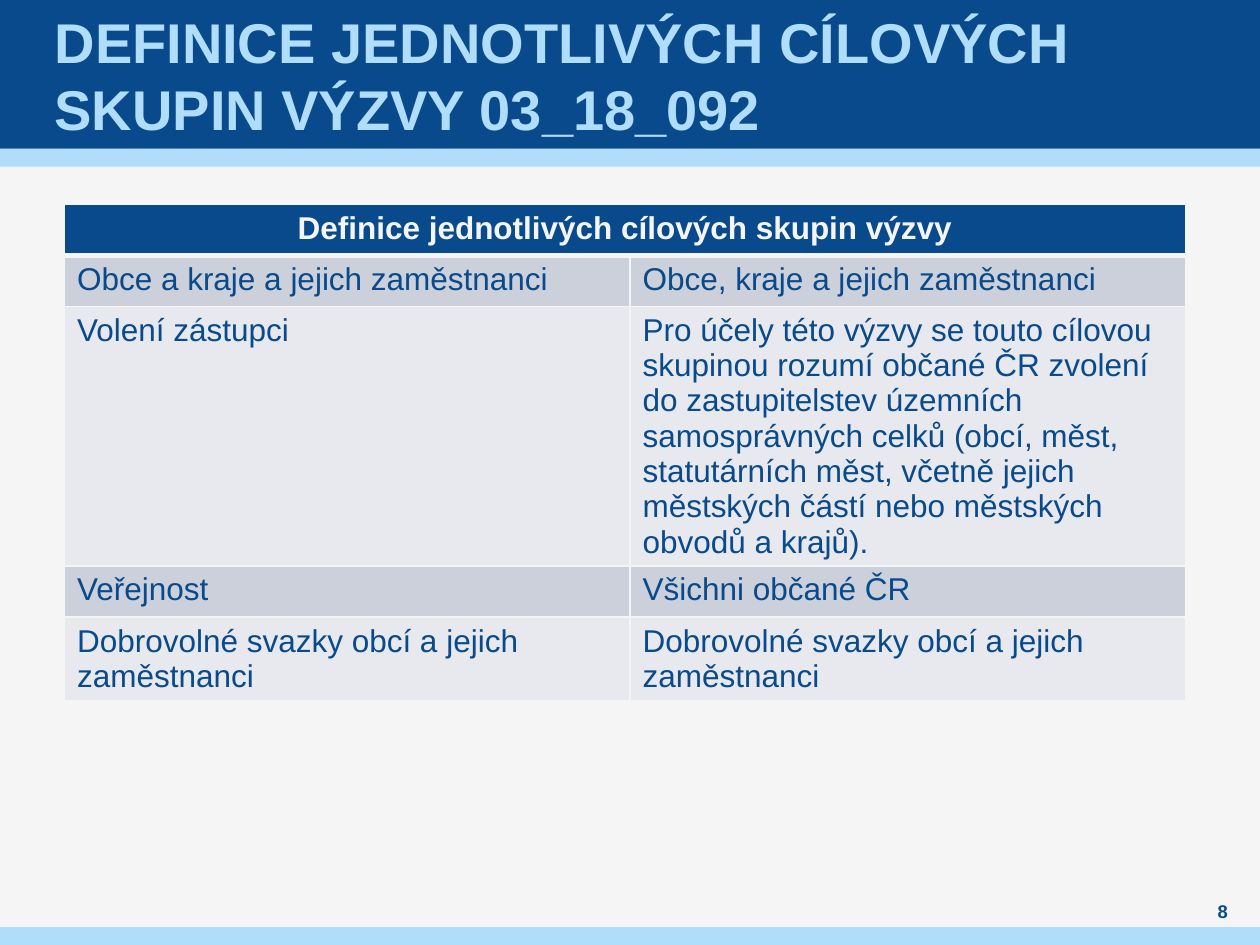
import pptx
import pptx.dml.color
import pptx.enum.shapes
import pptx.enum.text
import pptx.oxml
import pptx.oxml.ns
import pptx.util
from pptx.util import Cm

NAVY, SKY, PAPER = "084A8B", "AFDDFA", "F5F5F5"
ROW_FILLS = ["CCD0DA", "E7E9EE"]
TITLE = "DEFINICE JEDNOTLIVÝCH CÍLOVÝCH SKUPIN VÝZVY 03_18_092"
TABLE_HEADER = "Definice jednotlivých cílových skupin výzvy"
TARGET_GROUPS = [
    ("Obce a kraje a jejich zaměstnanci", "Obce, kraje a jejich zaměstnanci"),
    ("Volení zástupci",
     "Pro účely této výzvy se touto cílovou skupinou rozumí občané ČR zvolení "
     "do zastupitelstev územních samosprávných celků (obcí, měst, statutárních "
     "měst, včetně jejich městských částí nebo městských obvodů a krajů)."),
    ("Veřejnost", "Všichni občané ČR"),
    ("Dobrovolné svazky obcí a jejich zaměstnanci",
     "Dobrovolné svazky obcí a jejich zaměstnanci"),
]
PAGE_NUMBER = "8"
WIDTH, HEIGHT = 25.4, 19.05
HEADER_HEIGHT, STRIPE_HEIGHT = 3, 0.36
BANDS = [
    (HEADER_HEIGHT, STRIPE_HEIGHT, SKY),
    (0, HEADER_HEIGHT, NAVY),
    (HEIGHT - STRIPE_HEIGHT, STRIPE_HEIGHT, SKY),
]
COLUMN_WIDTHS = [11.4, 11.2]
ROW_HEIGHT = 1.03
LEFT = pptx.enum.text.PP_ALIGN.LEFT
CENTER = pptx.enum.text.PP_ALIGN.CENTER


def color(hex_value):
    return pptx.dml.color.RGBColor.from_string(hex_value)


def fill_solid(fill, hex_value):
    fill.solid()
    fill.fore_color.rgb = color(hex_value)


def write(text_frame, text, size, hex_value, bold=False, align=LEFT):
    paragraph = text_frame.paragraphs[0]
    paragraph.alignment = align
    run = paragraph.add_run()
    run.text = text
    run.font.name = "Arial"
    run.font.size = pptx.util.Pt(size)
    run.font.bold = bold
    run.font.color.rgb = color(hex_value)


def frame_text(text_frame, side_margin):
    text_frame.word_wrap = True
    text_frame.auto_size = pptx.enum.text.MSO_AUTO_SIZE.NONE
    text_frame.vertical_anchor = pptx.enum.text.MSO_ANCHOR.MIDDLE
    text_frame.margin_left = text_frame.margin_right = Cm(side_margin)
    text_frame.margin_top = text_frame.margin_bottom = 0


def set_borders(cell, top=1, bottom=1):
    properties = cell._tc.get_or_add_tcPr()
    widths = {"lnL": 1, "lnR": 1, "lnT": top, "lnB": bottom}
    for position, (side, points) in enumerate(widths.items()):
        properties.insert(position, pptx.oxml.parse_xml(
            f'<a:{side} {pptx.oxml.ns.nsdecls("a")} w="{pptx.util.Pt(points)}">'
            f'<a:solidFill><a:srgbClr val="{PAPER}"/></a:solidFill></a:{side}>'))


def add_bands(slide):
    for top, height, hex_value in BANDS:
        band = slide.shapes.add_shape(
            pptx.enum.shapes.MSO_SHAPE.RECTANGLE, 0, Cm(top), Cm(WIDTH), Cm(height))
        band.shadow.inherit = False
        band.line.fill.background()
        fill_solid(band.fill, hex_value)


def add_title(slide):
    title = slide.shapes.title
    title.left, title.top = Cm(1), 0
    title.width, title.height = Cm(23.4), Cm(HEADER_HEIGHT)
    title.element.getparent().append(title.element)
    frame_text(title.text_frame, 0.1)
    write(title.text_frame, TITLE, 32, SKY, bold=True)


def add_groups_table(slide):
    row_count = len(TARGET_GROUPS) + 1
    table = slide.shapes.add_table(
        row_count, len(COLUMN_WIDTHS), Cm(1.3), Cm(4.12),
        Cm(sum(COLUMN_WIDTHS)), Cm(ROW_HEIGHT * row_count)).table
    for column, width in zip(table.columns, COLUMN_WIDTHS):
        column.width = Cm(width)

    header = table.cell(0, 0)
    header.merge(table.cell(0, len(COLUMN_WIDTHS) - 1))
    write(header.text_frame, TABLE_HEADER, 18, PAPER, bold=True, align=CENTER)
    for cell in table.rows[0].cells:
        fill_solid(cell.fill, NAVY)
        set_borders(cell, bottom=3)

    for row, group in enumerate(TARGET_GROUPS, start=1):
        for column, text in enumerate(group):
            cell = table.cell(row, column)
            write(cell.text_frame, text, 18, NAVY)
            fill_solid(cell.fill, ROW_FILLS[(row - 1) % 2])
            set_borders(cell, top=3 if row == 1 else 1)


def add_page_number(slide):
    number = slide.shapes.add_textbox(Cm(24), Cm(18.11), Cm(1.3), Cm(0.51))
    frame_text(number.text_frame, 0)
    write(number.text_frame, PAGE_NUMBER, 10.5, NAVY, bold=True, align=CENTER)


def main():
    presentation = pptx.Presentation()
    presentation.slide_width, presentation.slide_height = Cm(WIDTH), Cm(HEIGHT)
    slide = presentation.slides.add_slide(presentation.slide_layouts[5])
    fill_solid(slide.background.fill, PAPER)
    add_bands(slide)
    add_title(slide)
    add_groups_table(slide)
    add_page_number(slide)
    presentation.save("out.pptx")


if __name__ == "__main__":
    main()
